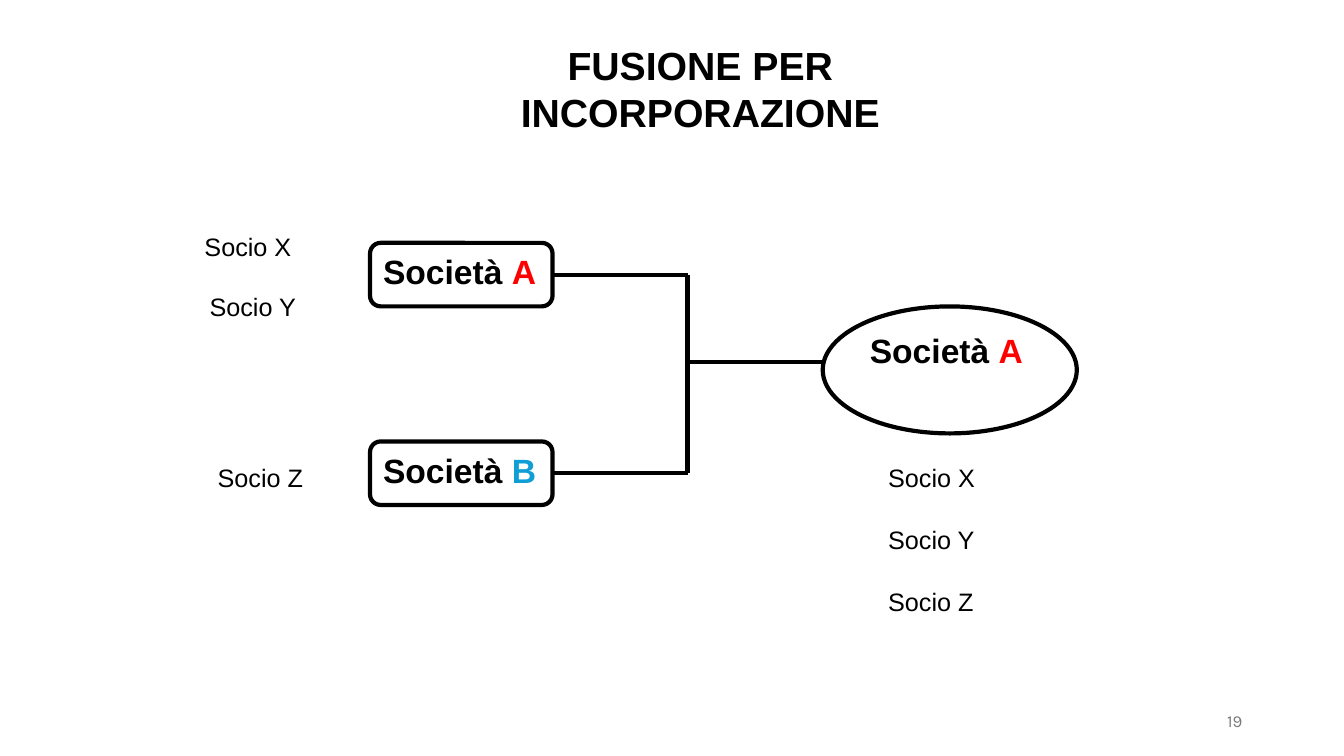
from dataclasses import dataclass

from lxml import etree
from pptx import Presentation
from pptx.dml.color import RGBColor
from pptx.enum.shapes import MSO_CONNECTOR, MSO_SHAPE
from pptx.enum.text import MSO_ANCHOR, MSO_AUTO_SIZE, PP_ALIGN
from pptx.oxml.ns import qn
from pptx.slide import Slide
from pptx.text.text import TextFrame
from pptx.util import Inches, Pt

ROUNDED = MSO_SHAPE.ROUNDED_RECTANGLE
OVAL = MSO_SHAPE.OVAL
STRAIGHT = MSO_CONNECTOR.STRAIGHT
LEFT, CENTER, RIGHT = PP_ALIGN.LEFT, PP_ALIGN.CENTER, PP_ALIGN.RIGHT
TOP, MIDDLE = MSO_ANCHOR.TOP, MSO_ANCHOR.MIDDLE
NO_AUTOFIT = MSO_AUTO_SIZE.NONE

COLORS = {"black": "000000", "red": "FF0000", "blue": "0F9ED5", "grey": "797979"}
LINE_WIDTH = Pt(3)
MEMBER_GAP = Pt(22.5)

TITLE_FONT = {"name": "Arial", "size": Pt(28), "bold": True}
COMPANY_FONT = {"name": "Arial", "size": Pt(24), "bold": True}
MEMBER_FONT = {"name": "Arial", "size": Pt(18)}
NUMBER_FONT = {"name": "Karla", "size": Pt(12)}


@dataclass
class Box:
    left: float
    top: float
    width: float
    height: float

    def lengths(self) -> list[int]:
        return [Inches(v) for v in (self.left, self.top, self.width, self.height)]


@dataclass
class Company:
    letter: str
    color: str
    outline: int
    box: Box


@dataclass
class Members:
    names: list[str]
    box: Box


@dataclass
class Link:
    x1: float
    y1: float
    x2: float
    y2: float


COMPANIES = [
    Company("A", "red", ROUNDED, Box(3.67, 2.41, 1.81, 0.63)),
    Company("B", "blue", ROUNDED, Box(3.67, 4.38, 1.81, 0.63)),
    Company("A", "red", OVAL, Box(8.16, 3.04, 2.52, 1.26)),
]
MEMBERS = [
    Members(["Socio X"], Box(1.93, 2.25, 1.66, 0.4)),
    Members(["Socio Y"], Box(1.98, 2.84, 1.25, 0.4)),
    Members(["Socio Z"], Box(2.06, 4.54, 1.08, 0.4)),
    Members(["Socio X", "Socio Y", "Socio Z"], Box(8.71, 4.54, 2.12, 1.85)),
]
COMPANY_EDGE, TRUNK, RESULT_EDGE = 5.49, 6.82, 8.16
A_LEVEL, RESULT_LEVEL, B_LEVEL = 2.73, 3.59, 4.69
LINKS = [
    Link(COMPANY_EDGE, A_LEVEL, TRUNK, A_LEVEL),
    Link(COMPANY_EDGE, B_LEVEL, TRUNK, B_LEVEL),
    Link(TRUNK, A_LEVEL, TRUNK, B_LEVEL),
    Link(TRUNK, RESULT_LEVEL, RESULT_EDGE, RESULT_LEVEL),
]


def set_frame(frame: TextFrame, anchor: int) -> None:
    settings = {"word_wrap": True, "auto_size": NO_AUTOFIT, "vertical_anchor": anchor}
    for attribute, value in settings.items():
        setattr(frame, attribute, value)


def add_run(frame: TextFrame, text: str, font: dict, color: str = "black",
            align: int = LEFT) -> None:
    """Append a run to the frame's last paragraph."""
    paragraph = frame.paragraphs[-1]
    paragraph.alignment = align
    run = paragraph.add_run()
    run.text = text
    for attribute, value in font.items():
        setattr(run.font, attribute, value)
    run.font.color.rgb = RGBColor.from_string(COLORS[color])


def add_title(slide: Slide, text: str, box: Box) -> None:
    title = slide.shapes.title
    title.left, title.top, title.width, title.height = box.lengths()
    set_frame(title.text_frame, MIDDLE)
    add_run(title.text_frame, text, TITLE_FONT, align=CENTER)


def add_company(slide: Slide, company: Company) -> None:
    shape = slide.shapes.add_shape(company.outline, *company.box.lengths())
    shape.shadow.inherit = False
    shape.fill.background()
    shape.line.color.rgb = RGBColor.from_string(COLORS["black"])
    shape.line.width = LINE_WIDTH
    set_frame(shape.text_frame, TOP)
    add_run(shape.text_frame, "Società ", COMPANY_FONT)
    add_run(shape.text_frame, company.letter, COMPANY_FONT, company.color)


def add_members(slide: Slide, members: Members) -> None:
    frame = slide.shapes.add_textbox(*members.box.lengths()).text_frame
    set_frame(frame, TOP)
    for index, name in enumerate(members.names):
        if index:
            frame.add_paragraph().space_before = MEMBER_GAP
        add_run(frame, name, MEMBER_FONT)


def add_link(slide: Slide, link: Link) -> None:
    ends = [Inches(v) for v in (link.x1, link.y1, link.x2, link.y2)]
    connector = slide.shapes.add_connector(STRAIGHT, *ends)
    connector.line.color.rgb = RGBColor.from_string(COLORS["black"])
    connector.line.width = LINE_WIDTH
    etree.SubElement(connector._element.spPr, qn("a:effectLst"))


def add_page_number(slide: Slide, number: str, box: Box) -> None:
    frame = slide.shapes.add_textbox(*box.lengths()).text_frame
    set_frame(frame, MIDDLE)
    add_run(frame, number, NUMBER_FONT, "grey", RIGHT)


def main() -> None:
    deck = Presentation()
    deck.slide_width, deck.slide_height = Inches(13.33), Inches(7.5)
    slide = deck.slides.add_slide(deck.slide_layouts.get_by_name("Title Only"))
    add_title(slide, "FUSIONE PER INCORPORAZIONE", Box(4.07, 0.36, 5.75, 1.04))
    for company in COMPANIES:
        add_company(slide, company)
    for members in MEMBERS:
        add_members(slide, members)
    for link in LINKS:
        add_link(slide, link)
    add_page_number(slide, "19", Box(9.42, 6.95, 3, 0.4))
    deck.save("out.pptx")


if __name__ == "__main__":
    main()
